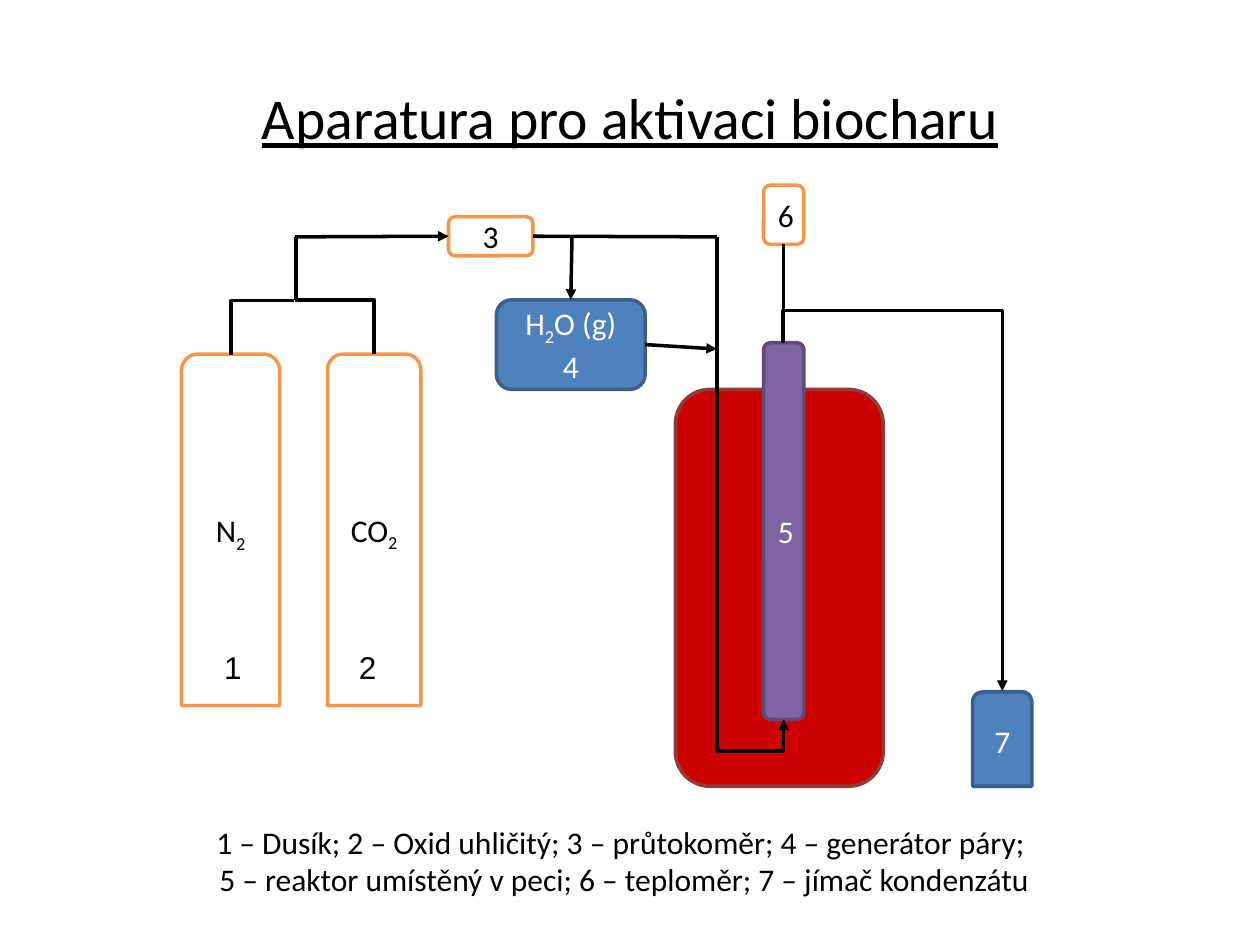
"""Build the slide with the biochar activation apparatus."""
from lxml import etree
from pptx import Presentation, util as u
from pptx.dml.color import RGBColor
from pptx.enum import shapes, text
from pptx.oxml import ns

COLUMNS, ROWS = 100, 75
BLACK, WHITE, ORANGE = "000000", "FFFFFF", "F79646"
BLUE, NAVY = "4F81BD", "3A5F8C"
ROUND = shapes.MSO_SHAPE.ROUNDED_RECTANGLE
BOTTLE = shapes.MSO_SHAPE.ROUND_2_SAME_RECTANGLE
TOP, LEFT, BOTTOM, RIGHT = range(4)


def cells(*counts):
    """Turn counts of grid cells, each a tenth of an inch, into lengths."""
    return [u.Inches(count / 10) for count in counts]


def color(value):
    """Turn a hex string into a colour."""
    return RGBColor.from_string(value)


def write(box, content, size=18, font="Calibri", ink=BLACK, underline=None,
          align=text.PP_ALIGN.CENTER, anchor=text.MSO_ANCHOR.MIDDLE):
    """Write lines into a box; parts between bars are subscripts."""
    frame = box.text_frame
    frame.word_wrap = True
    frame.vertical_anchor = anchor
    for number, line in enumerate(content.split("\n")):
        para = frame.add_paragraph() if number else frame.paragraphs[0]
        para.alignment = align
        for index, part in enumerate(line.split("|")):
            span = para.add_run()
            span.text = part
            span.font.size = u.Pt(size)
            span.font.name = font
            span.font.underline = underline
            span.font.color.rgb = color(ink)
            if index % 2:
                span.font._element.set("baseline", "-25000")


def add_vessel(page, place, outline, content="", kind=ROUND, fill=WHITE, ink=BLACK):
    """Add a labelled part of the apparatus."""
    vessel = page.shapes.add_shape(kind, *cells(*place))
    vessel.shadow.inherit = False
    vessel.fill.solid()
    vessel.fill.fore_color.rgb = color(fill)
    vessel.line.color.rgb = color(outline)
    vessel.line.width = u.Pt(2)
    if content:
        write(vessel, content, ink=ink)
    return vessel


def add_text(page, place, content, **style):
    """Add a text box."""
    write(page.shapes.add_textbox(*cells(*place)), content, **style)


def style_pipe(pipe, arrow):
    """Give a connector its line, an optional arrowhead and no shadow."""
    pipe.line.color.rgb = color(BLACK)
    pipe.line.width = u.Pt(2)
    if arrow:
        line = pipe.line._get_or_add_ln()
        etree.SubElement(line, ns.qn("a:tailEnd"), type="triangle")
    etree.SubElement(pipe._element.spPr, ns.qn("a:effectLst"))


def add_pipe(page, start, end, arrow=False, source=None, target=None):
    """Add a straight pipe, joined to (vessel, side) pairs where given."""
    pipe = page.shapes.add_connector(
        shapes.MSO_CONNECTOR.STRAIGHT, *cells(*start, *end))
    if source:
        pipe.begin_connect(*source)
    if target:
        pipe.end_connect(*target)
    style_pipe(pipe, arrow)


def add_elbow(page, place, turn, flips, bend=None):
    """Add a bent pipe from its unturned frame; a bend means two corners."""
    left, top, width, height = place
    pipe = page.shapes.add_connector(
        shapes.MSO_CONNECTOR.ELBOW, *cells(left, top, left + width, top + height))
    frame = pipe._element.spPr.find(ns.qn("a:xfrm"))
    frame.set("rot", str(turn * 60000))
    for flip in flips:
        frame.set(f"flip{flip}", "1")
    geometry = pipe._element.spPr.find(ns.qn("a:prstGeom"))
    if bend is None:
        geometry.set("prst", "bentConnector2")
    else:
        guides = geometry.find(ns.qn("a:avLst"))
        if guides is None:
            guides = etree.SubElement(geometry, ns.qn("a:avLst"))
        etree.SubElement(guides, ns.qn("a:gd"), name="adj1",
                         fmla=f"val {round(bend * 100000)}")
    style_pipe(pipe, arrow=bend is not None)


def add_apparatus(page):
    """Add the vessels and return those that pipes join."""
    add_vessel(page, (14.4, 28.1, 7.8, 27.9), ORANGE, "N|2", BOTTLE)
    add_vessel(page, (26, 28.1, 7.4, 27.9), ORANGE, "CO|2", BOTTLE)
    add_vessel(page, (53.6, 30.9, 16.5, 31.5), "8E3B39", fill="CC0000")
    steam = add_vessel(page, (39.4, 23.8, 11.8, 7.1), NAVY, "H|2|O (g)\n4",
                       fill=BLUE, ink=WHITE)
    reactor = add_vessel(page, (60.6, 27.2, 3.2, 29.9), "5F4A78", "5",
                         fill="8064A2", ink=WHITE)
    thermometer = add_vessel(page, (60.6, 14.7, 3.2, 4.7), ORANGE, "6")
    flowmeter = add_vessel(page, (35.6, 17.2, 6.7, 3.1), ORANGE, "3")
    add_vessel(page, (77.2, 54.9, 4.7, 7.5), NAVY, "7", BOTTLE, BLUE, WHITE)
    return steam, reactor, thermometer, flowmeter


def add_piping(page, steam, reactor, thermometer, flowmeter):
    """Join the vessels with pipes."""
    add_elbow(page, (24.4, 22.8, 4.3, 6.3), 270, "V")
    add_elbow(page, (18.7, 23.5, 4.3, 5), 90, "HV")
    add_pipe(page, (23.4, 18.8), (35.6, 18.8), True, target=(flowmeter, LEFT))
    add_pipe(page, (23.5, 18.8), (23.5, 23.8))
    add_elbow(page, (40.4, 35.3, 38.3, 5.3), 270, "H", 1.065)
    add_pipe(page, (42.3, 18.8), (56.9, 18.8), source=(flowmeter, RIGHT))
    add_elbow(page, (57, 32.3, 27.7, 17.4), 270, "H", -0.09)
    add_pipe(page, (62.1, 19.5), (62.1, 27.2),
             source=(thermometer, BOTTOM), target=(reactor, TOP))
    add_pipe(page, (45.4, 18.8), (45.4, 23.8), True, target=(steam, TOP))
    add_pipe(page, (51.3, 27.7), (56.9, 27.7), True, source=(steam, RIGHT))


def main():
    """Build and save the deck."""
    deck = Presentation()
    deck.slide_width, deck.slide_height = cells(COLUMNS, ROWS)
    page = deck.slides.add_slide(deck.slide_layouts[6])
    joined = add_apparatus(page)
    for label, left in (("1", 16.8), ("2", 27.5)):
        add_text(page, (left, 50.9, 3.1, 4), label, font="Arial",
                 align=text.PP_ALIGN.LEFT, anchor=text.MSO_ANCHOR.TOP)
    add_text(page, (1.5, 64.8, 96.1, 7.1),
             "1 – Dusík; 2 – Oxid uhličitý; 3 – průtokoměr; 4 – generátor páry; \n"
             "5 – reaktor umístěný v peci; 6 – teploměr; 7 – jímač kondenzátu",
             anchor=text.MSO_ANCHOR.TOP)
    add_text(page, (5, 3, 90, 12.5), "Aparatura pro aktivaci biocharu",
             size=33, underline=True)
    add_piping(page, *joined)
    deck.save("out.pptx")


if __name__ == "__main__":
    main()
